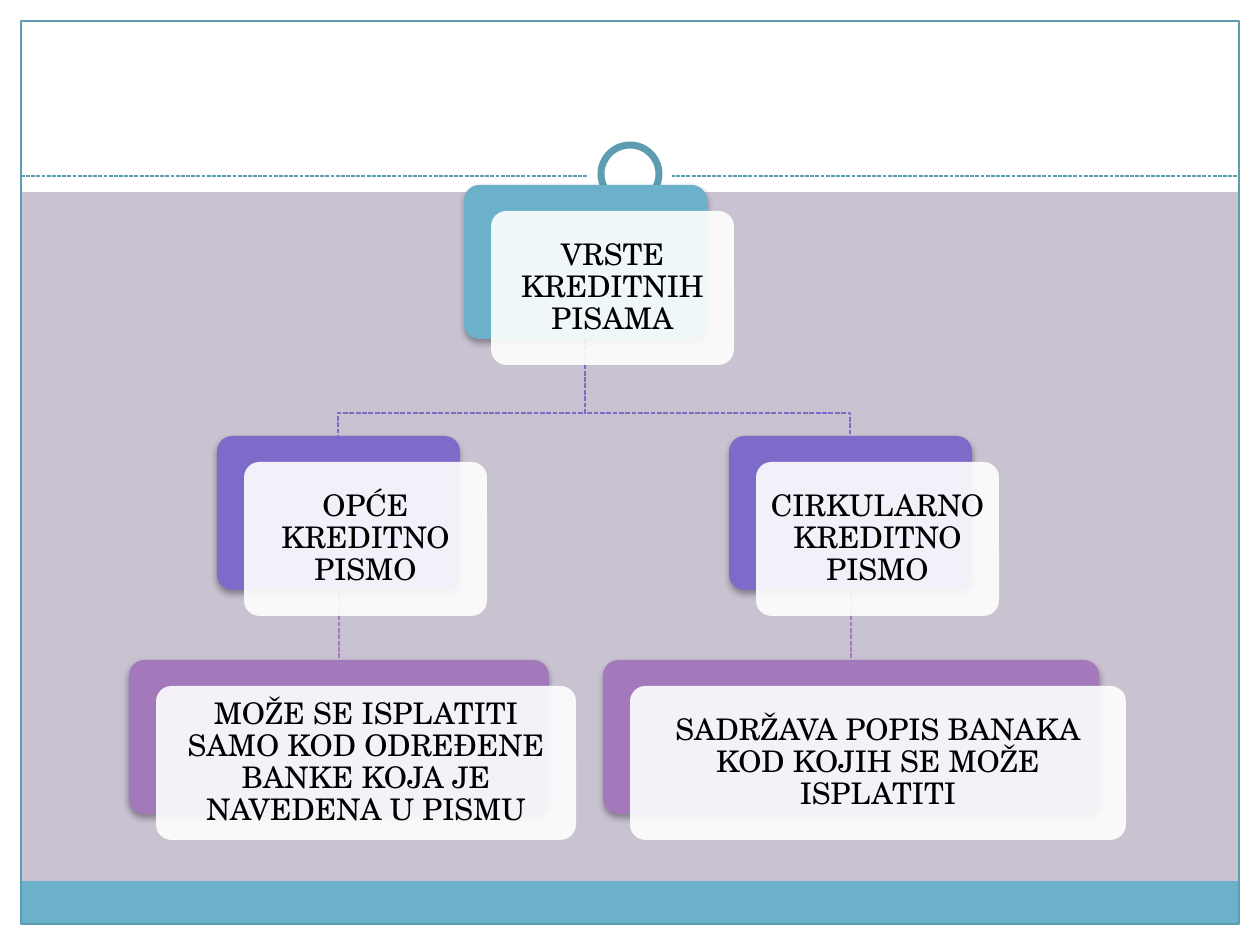
from dataclasses import dataclass

from lxml import etree
from pptx import Presentation
from pptx.dml.color import RGBColor
from pptx.enum.dml import MSO_LINE
from pptx.enum.shapes import MSO_CONNECTOR, MSO_SHAPE
from pptx.enum.text import MSO_ANCHOR, PP_ALIGN
from pptx.oxml.ns import qn
from pptx.util import Pt

RECTANGLE = MSO_SHAPE.RECTANGLE
OVAL = MSO_SHAPE.OVAL
ROUNDED = MSO_SHAPE.ROUNDED_RECTANGLE
STRAIGHT = MSO_CONNECTOR.STRAIGHT
SHORT_DASH = MSO_LINE.SQUARE_DOT
MIDDLE = MSO_ANCHOR.MIDDLE
CENTER = PP_ALIGN.CENTER

WHITE = RGBColor(0xFF, 0xFF, 0xFF)
BLACK = RGBColor(0x00, 0x00, 0x00)
LILAC = RGBColor(0xC9, 0xC2, 0xD1)
TEAL = RGBColor(0x6B, 0xB1, 0xC9)
DARK_TEAL = RGBColor(0x5E, 0x9C, 0xB1)
VIOLET = RGBColor(0x7E, 0x6B, 0xC9)
PURPLE = RGBColor(0xA3, 0x79, 0xBB)

FONT = "TeX Gyre Schola"
EMU_PER_PX = 914400 / 126
SLIDE_W, SLIDE_H = 1260, 945
MARGIN = 21
CARD_H = 154
FRONT_DX, FRONT_DY = 27, 26
TEXT_INSET = 9
ELBOW_RISE = 23


@dataclass(frozen=True)
class Card:
    text: str
    left: int
    top: int
    width: int
    color: RGBColor

    @property
    def center(self) -> int:
        return self.left + self.width // 2

    @property
    def bottom(self) -> int:
        return self.top + CARD_H


@dataclass(frozen=True)
class Band:
    left: int
    top: int
    width: int
    height: int
    color: RGBColor


ROOT = Card("VRSTE KREDITNIH PISAMA", 464, 185, 243, TEAL)
GENERAL = Card("OPĆE KREDITNO PISMO", 217, 436, 243, VIOLET)
GENERAL_NOTE = Card(
    "MOŽE SE ISPLATITI SAMO KOD ODREĐENE BANKE KOJA JE NAVEDENA U PISMU",
    129, 660, 420, PURPLE)
CIRCULAR = Card("CIRKULARNO KREDITNO PISMO", 729, 436, 243, VIOLET)
CIRCULAR_NOTE = Card(
    "SADRŽAVA POPIS BANAKA KOD KOJIH SE MOŽE ISPLATITI",
    603, 660, 496, PURPLE)
CARDS = (ROOT, GENERAL, GENERAL_NOTE, CIRCULAR, CIRCULAR_NOTE)
BRANCHES = ((CIRCULAR, CIRCULAR_NOTE), (GENERAL, GENERAL_NOTE))

BANDS = (
    Band(0, SLIDE_H - MARGIN, SLIDE_W, MARGIN, WHITE),
    Band(0, 0, SLIDE_W, 192, WHITE),
    Band(0, 0, MARGIN, SLIDE_H, WHITE),
    Band(SLIDE_W - MARGIN, 0, MARGIN, SLIDE_H, WHITE),
    Band(MARGIN, 881, SLIDE_W - 2 * MARGIN, 43, TEAL),
)


def px(length: float) -> int:
    return round(length * EMU_PER_PX)


def add_box(slide, kind, left: int, top: int, width: int, height: int,
            fill: RGBColor | None, line: RGBColor | None = None,
            line_pt: float = 0.75):
    box = slide.shapes.add_shape(kind, px(left), px(top), px(width), px(height))
    box.shadow.inherit = False
    if fill is None:
        box.fill.background()
    else:
        box.fill.solid()
        box.fill.fore_color.rgb = fill
    if line is None:
        box.line.fill.background()
    else:
        box.line.color.rgb = line
        box.line.width = Pt(line_pt)
    return box


def dash(line, color: RGBColor, width_pt: float) -> None:
    line.color.rgb = color
    line.width = Pt(width_pt)
    line.dash_style = SHORT_DASH


def add_dashed_line(slide, x1: int, y1: int, x2: int, y2: int,
                    color: RGBColor, width_pt: float) -> None:
    connector = slide.shapes.add_connector(STRAIGHT, px(x1), px(y1), px(x2), px(y2))
    dash(connector.line, color, width_pt)
    etree.SubElement(connector._element.spPr, qn("a:effectLst"))


def add_elbow(slide, parent: Card, child: Card) -> None:
    bend = child.top - ELBOW_RISE
    builder = slide.shapes.build_freeform(px(parent.center), px(parent.bottom))
    corners = ((parent.center, bend), (child.center, bend), (child.center, child.top))
    builder.add_line_segments([(px(x), px(y)) for x, y in corners], close=False)
    elbow = builder.convert_to_shape()
    elbow.shadow.inherit = False
    elbow.fill.background()
    dash(elbow.line, child.color, 0.9)


def add_drop_shadow(box) -> None:
    effects = box._element.spPr.find(qn("a:effectLst"))
    shadow = etree.SubElement(effects, qn("a:outerShdw"), blurRad=str(Pt(4)),
                              dist=str(Pt(2)), dir="5400000", rotWithShape="0")
    tint = etree.SubElement(shadow, qn("a:srgbClr"), val=str(BLACK))
    etree.SubElement(tint, qn("a:alpha"), val="35000")


def add_card(slide, card: Card) -> None:
    back = add_box(slide, ROUNDED, card.left, card.top, card.width, CARD_H, card.color)
    front = add_box(slide, ROUNDED, card.left + FRONT_DX, card.top + FRONT_DY,
                    card.width, CARD_H, WHITE)
    back.adjustments[0] = front.adjustments[0] = 0.1
    add_drop_shadow(back)
    front_color = front._element.spPr.find(qn("a:solidFill"))[0]
    etree.SubElement(front_color, qn("a:alpha"), val="90000")

    frame = front.text_frame
    frame.text = card.text
    frame.word_wrap = True
    frame.vertical_anchor = MIDDLE
    frame.margin_left = frame.margin_right = px(TEXT_INSET)
    frame.margin_top = frame.margin_bottom = px(TEXT_INSET)
    label = frame.paragraphs[0]
    label.alignment = CENTER
    label.line_spacing = 0.9
    font = label.runs[0].font
    font.name = FONT
    font.size = Pt(17)
    font.color.rgb = BLACK


def add_backdrop(slide) -> None:
    slide.background.fill.solid()
    slide.background.fill.fore_color.rgb = LILAC
    for band in BANDS:
        add_box(slide, RECTANGLE, band.left, band.top, band.width, band.height, band.color)
    add_box(slide, RECTANGLE, MARGIN, MARGIN, SLIDE_W - 2 * MARGIN,
            SLIDE_H - 2 * MARGIN, None, DARK_TEAL)
    add_dashed_line(slide, MARGIN, 176, SLIDE_W - MARGIN, 176, DARK_TEAL, 0.75)
    add_box(slide, OVAL, 588, 132, 84, 84, WHITE)
    add_box(slide, OVAL, 601, 145, 58, 58, WHITE, DARK_TEAL, 4)


def main() -> None:
    deck = Presentation()
    deck.slide_width, deck.slide_height = px(SLIDE_W), px(SLIDE_H)
    slide = deck.slides.add_slide(deck.slide_layouts[6])
    add_backdrop(slide)
    for kind, note in BRANCHES:
        add_dashed_line(slide, note.center, kind.bottom, note.center, note.top,
                        note.color, 0.9)
        add_elbow(slide, ROOT, kind)
    for card in CARDS:
        add_card(slide, card)
    deck.save("out.pptx")


if __name__ == "__main__":
    main()
